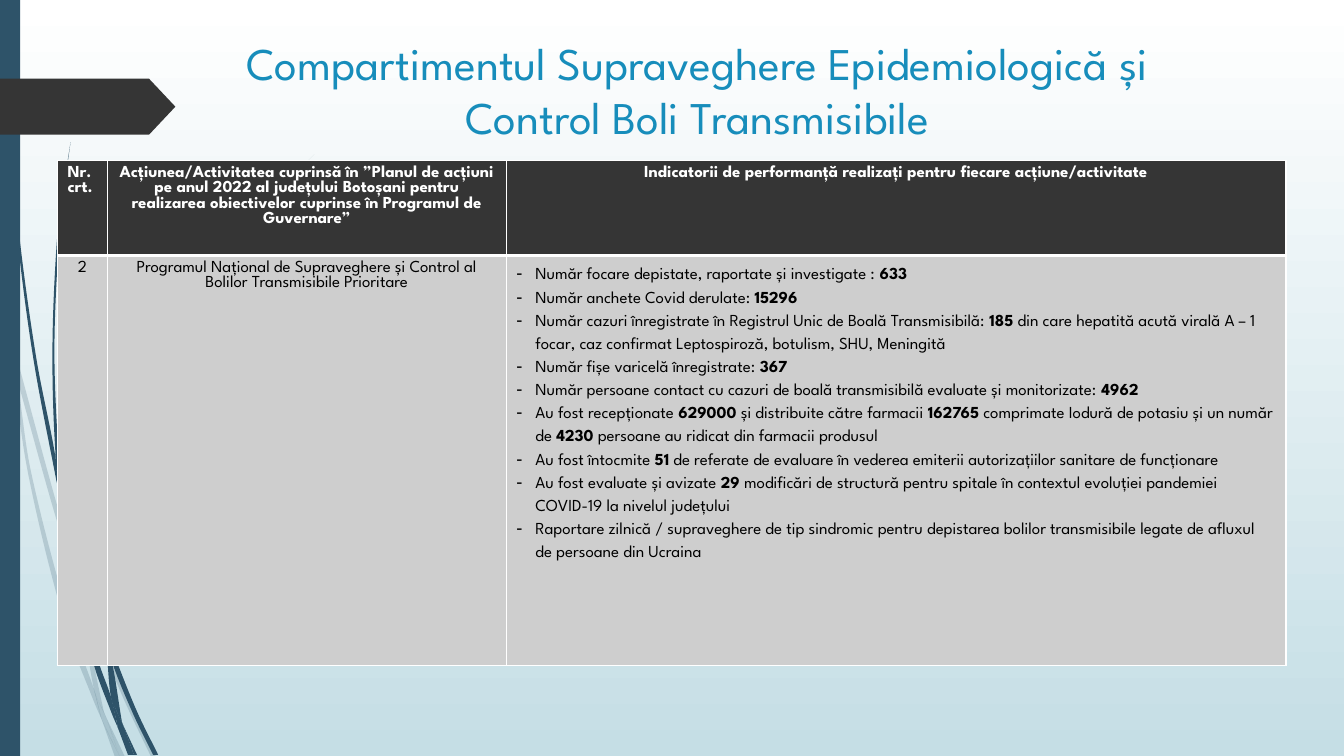
from dataclasses import dataclass
from math import dist

from lxml.etree import SubElement
from pptx import Presentation
from pptx.dml.color import RGBColor
from pptx.enum.shapes import MSO_SHAPE
from pptx.enum.text import MSO_ANCHOR, PP_ALIGN
from pptx.oxml.ns import qn
from pptx.util import Pt


@dataclass(frozen=True)
class Theme:
    font: str = "League Spartan"
    title_size: float = 32.4
    table_size: float = 12
    title: str = "178DBB"
    stem: str = "2E5369"
    dark: str = "353535"
    body: str = "CECECE"
    white: str = "FFFFFF"
    black: str = "000000"
    sky: str = "C5DEE5"
    pale_opacity: int = 20


THEME = Theme()
GRID = 0.72  # points per unit of the blade coordinates

# Each blade is two edges running from its first tip to its last.
PALE_BLADES = [
    ([(0, 282), (9, 322), (11, 350)], [(0, 299), (10, 344), (11, 350)]),
    ([(14, 345), (62, 520), (84, 586)], [(17, 376), (58, 522), (84, 599)]),
    ([(88, 596), (92, 607), (127, 692), (155, 751)], [(88, 610), (123, 694), (150, 751)]),
    ([(105, 711), (124, 751)], [(105, 711), (119, 751)]),
    ([(11, 350), (17, 376), (31, 469), (70, 619), (93, 683), (101, 714)],
     [(11, 350), (28, 470), (65, 621), (92, 693), (101, 714)]),
    ([(84, 599), (88, 610), (91, 646), (103, 706), (105, 711)],
     [(84, 599), (87, 646), (93, 683), (96, 692), (105, 711)]),
    ([(312, 153), (268, 197), (228, 244), (158, 348), (107, 461), (85, 584), (88, 596)],
     [(312, 153), (268, 198), (229, 245), (160, 349), (110, 462), (88, 584), (88, 596)]),
    ([(101, 714), (119, 751)], [(101, 714), (114, 751)]),
    ([(85, 586), (88, 596), (88, 610)], [(84, 599), (88, 610)]),
    ([(93, 683), (96, 692), (105, 711), (119, 751)],
     [(93, 683), (99, 707), (101, 714), (119, 751)]),
]
DARK_BLADES = [
    ([(4, 0), (5, 48), (8, 109), (19, 232), (36, 355), (55, 453), (57, 481)],
     [(3, 0), (4, 48), (7, 110), (17, 233), (33, 355), (56, 477), (57, 481)]),
    ([(60, 472), (93, 590), (106, 631)], [(60, 472), (64, 505), (88, 592), (106, 645)]),
    ([(110, 641), (113, 649), (136, 706), (157, 749)],
     [(110, 641), (111, 656), (132, 708), (152, 749)]),
    ([(57, 477), (64, 505), (72, 556), (98, 657), (110, 691), (117, 722)],
     [(57, 477), (68, 557), (93, 659), (111, 708), (117, 722)]),
    ([(70, 141), (63, 193), (58, 245), (54, 349), (58, 453), (60, 472)],
     [(70, 141), (62, 193), (56, 245), (52, 349), (55, 449), (60, 472)]),
    ([(122, 719), (136, 749)], [(122, 719), (133, 749)]),
    ([(55, 449), (60, 472), (64, 505)], [(55, 453), (57, 477), (64, 505)]),
    ([(260, 344), (231, 373), (204, 405), (156, 474), (122, 551), (106, 631), (110, 641)],
     [(260, 344), (231, 374), (205, 406), (158, 476), (125, 552), (111, 633), (110, 641)]),
    ([(117, 722), (131, 749)], [(117, 722), (127, 749)]),
    ([(106, 645), (111, 656), (121, 716), (122, 719)],
     [(106, 645), (110, 691), (116, 706), (122, 719)]),
    ([(106, 631), (110, 641), (111, 656)], [(106, 631), (106, 645), (111, 656)]),
    ([(110, 691), (116, 706), (122, 719), (133, 749)],
     [(110, 691), (116, 717), (117, 722), (130, 749)]),
]

TITLE = "Compartimentul Supraveghere Epidemiologică și Control Boli Transmisibile"
HEADINGS = [
    "Nr. crt.",
    "Acțiunea/Activitatea cuprinsă în ”Planul de acțiuni pe anul 2022 al județului Botoșani "
    "pentru realizarea obiectivelor cuprinse în Programul de Guvernare”",
    "Indicatorii de performanță realizați pentru fiecare acțiune/activitate",
]
PROGRAM = ["2", "Programul Național de Supraveghere și Control al Bolilor Transmisibile Prioritare"]
# Asterisks enclose the figures set in bold.
INDICATORS = [
    "Număr focare depistate, raportate și investigate : *633*",
    "Număr anchete Covid derulate: *15296*",
    "Număr cazuri înregistrate în Registrul Unic de Boală Transmisibilă: *185* din care hepatită "
    "acută virală A – 1 focar, caz confirmat Leptospiroză, botulism, SHU, Meningită",
    "Număr fișe varicelă înregistrate: *367*",
    "Număr persoane contact cu cazuri de boală transmisibilă evaluate și monitorizate: *4962*",
    "Au fost recepționate *629000* și distribuite către farmacii *162765* comprimate Iodură de "
    "potasiu și un număr de *4230* persoane au ridicat din farmacii produsul",
    "Au fost întocmite *51* de referate de evaluare în vederea emiterii autorizațiilor sanitare "
    "de funcționare",
    "Au fost evaluate și avizate *29* modificări de structură pentru spitale în contextul "
    "evoluției pandemiei COVID-19 la nivelul județului",
    "Raportare zilnică / supraveghere de tip sindromic pentru depistarea bolilor transmisibile "
    "legate de afluxul de persoane din Ucraina",
]


def rgb(code):
    return RGBColor.from_string(code)


def paint(shape, color):
    shape.shadow.inherit = False
    shape.fill.solid()
    shape.fill.fore_color.rgb = rgb(color)
    shape.line.fill.background()


def style(paragraph, size, color, bold=None):
    font = paragraph.font
    font.name, font.size, font.bold = THEME.font, Pt(size), bold
    font.color.rgb = rgb(color)


def handle(point, before, after, reach):
    """Return a Bézier handle at point, parallel to the line from before to after."""
    share = reach / 3 / dist(before, after)
    return tuple(p + (b - a) * share for p, a, b in zip(point, before, after))


def bend(blade, edges, outline):
    """Turn the straight sides of a blade into smooth curves."""
    origin = [min(axis) for axis in zip(*outline)]
    sides = list(blade._element.iter(qn("a:lnTo")))
    start = 0
    for edge in edges:
        padded = [edge[0], *edge, edge[-1]]
        for side, a, b, c, d in zip(sides[start:], padded, padded[1:], padded[2:], padded[3:]):
            side.tag = qn("a:cubicBezTo")
            side.clear()
            reach = dist(b, c)
            for point in (handle(b, a, c, reach), handle(c, d, b, reach), c):
                x, y = (str(round(value - zero)) for value, zero in zip(point, origin))
                SubElement(side, qn("a:pt"), x=x, y=y)
        start += len(edge)


def add_blades(slide, left, top, blades, opacity=100):
    for near, far in blades:
        edges = [[(Pt(x * GRID), Pt(y * GRID)) for x, y in edge] for edge in (near, far[::-1])]
        outline = edges[0] + edges[1]
        builder = slide.shapes.build_freeform(*outline[0])
        builder.add_line_segments(outline[1:], close=True)
        blade = builder.convert_to_shape(Pt(left), Pt(top))
        bend(blade, edges, outline)
        paint(blade, THEME.stem)
        if opacity < 100:
            color = blade.fill._xPr.find(qn("a:solidFill"))[0]
            SubElement(color, qn("a:alpha"), val=str(opacity * 1000))


def add_backdrop(slide, left, top, height):
    fill = slide.background.fill
    fill.gradient()
    fill.gradient_angle = 270
    for stop, color in zip(fill.gradient_stops, (THEME.white, THEME.sky)):
        stop.color.rgb = rgb(color)
    add_blades(slide, left, top, PALE_BLADES, THEME.pale_opacity)
    add_blades(slide, left, top, DARK_BLADES)
    band = slide.shapes.add_shape(MSO_SHAPE.RECTANGLE, Pt(left), Pt(top), Pt(14.4), Pt(height))
    paint(band, THEME.stem)
    marker = slide.shapes.add_shape(
        MSO_SHAPE.PENTAGON, Pt(left), Pt(top + 56.2), Pt(125.3), Pt(40))
    marker.adjustments[0] = 0.47
    paint(marker, THEME.dark)


def add_title(slide, left, top, width, height):
    frame = slide.shapes.add_textbox(Pt(left), Pt(top), Pt(width), Pt(height)).text_frame
    frame.word_wrap = True
    frame.vertical_anchor = MSO_ANCHOR.TOP
    heading = frame.paragraphs[0]
    heading.text = TITLE
    heading.alignment = PP_ALIGN.CENTER
    style(heading, THEME.title_size, THEME.title)


def finish_cell(cell, fill, top, bottom):
    """Draw white borders, then fill the cell."""
    properties = cell._tc.get_or_add_tcPr()
    for side, weight in (("L", 1), ("R", 1), ("T", top), ("B", bottom)):
        border = SubElement(properties, qn(f"a:ln{side}"), w=str(Pt(weight)))
        SubElement(SubElement(border, qn("a:solidFill")), qn("a:srgbClr"), val=THEME.white)
    cell.fill.solid()
    cell.fill.fore_color.rgb = rgb(fill)


def write_indicators(frame):
    for index, indicator in enumerate(INDICATORS):
        item = frame.add_paragraph() if index else frame.paragraphs[0]
        item.line_spacing = 1.5
        style(item, THEME.table_size, THEME.black)
        properties = item._p.get_or_add_pPr()
        properties.set("marL", str(Pt(13.5)))
        properties.set("indent", str(Pt(-13.5)))
        dash = properties.makeelement(qn("a:buChar"), {"char": "-"})
        properties.find(qn("a:defRPr")).addprevious(dash)
        for part, words in enumerate(indicator.split("*")):
            if words:
                run = item.add_run()
                run.text = words
                run.font.bold = part % 2 == 1


def add_activity_table(slide, left, top, columns, rows):
    table = slide.shapes.add_table(
        len(rows), len(columns), Pt(left), Pt(top), Pt(sum(columns)), Pt(sum(rows))).table
    for column, width in zip(table.columns, columns):
        column.width = Pt(width)
    for row, height in zip(table.rows, rows):
        row.height = Pt(height)
    for index, texts in enumerate((HEADINGS, PROGRAM)):
        is_header = index == 0
        for column, words in enumerate(texts):
            entry = table.cell(index, column).text_frame.paragraphs[0]
            entry.text = words
            entry.alignment = PP_ALIGN.LEFT if is_header and column == 0 else PP_ALIGN.CENTER
            style(entry, THEME.table_size, THEME.white if is_header else THEME.black, is_header)
    write_indicators(table.cell(1, 2).text_frame)
    for column in range(len(columns)):
        finish_cell(table.cell(0, column), THEME.dark, 1, 3)
        finish_cell(table.cell(1, column), THEME.body, 3, 1)


def main():
    deck = Presentation()
    deck.slide_width, deck.slide_height = Pt(960), Pt(540)
    slide = deck.slides.add_slide(deck.slide_layouts[6])
    add_backdrop(slide, 0, 0, 540)
    add_title(slide, 147, 21.6, 702, 100.8)
    add_activity_table(slide, 41.2, 114.8, (35.5, 285.1, 556.8), (67.7, 293))
    deck.save("out.pptx")


if __name__ == "__main__":
    main()
